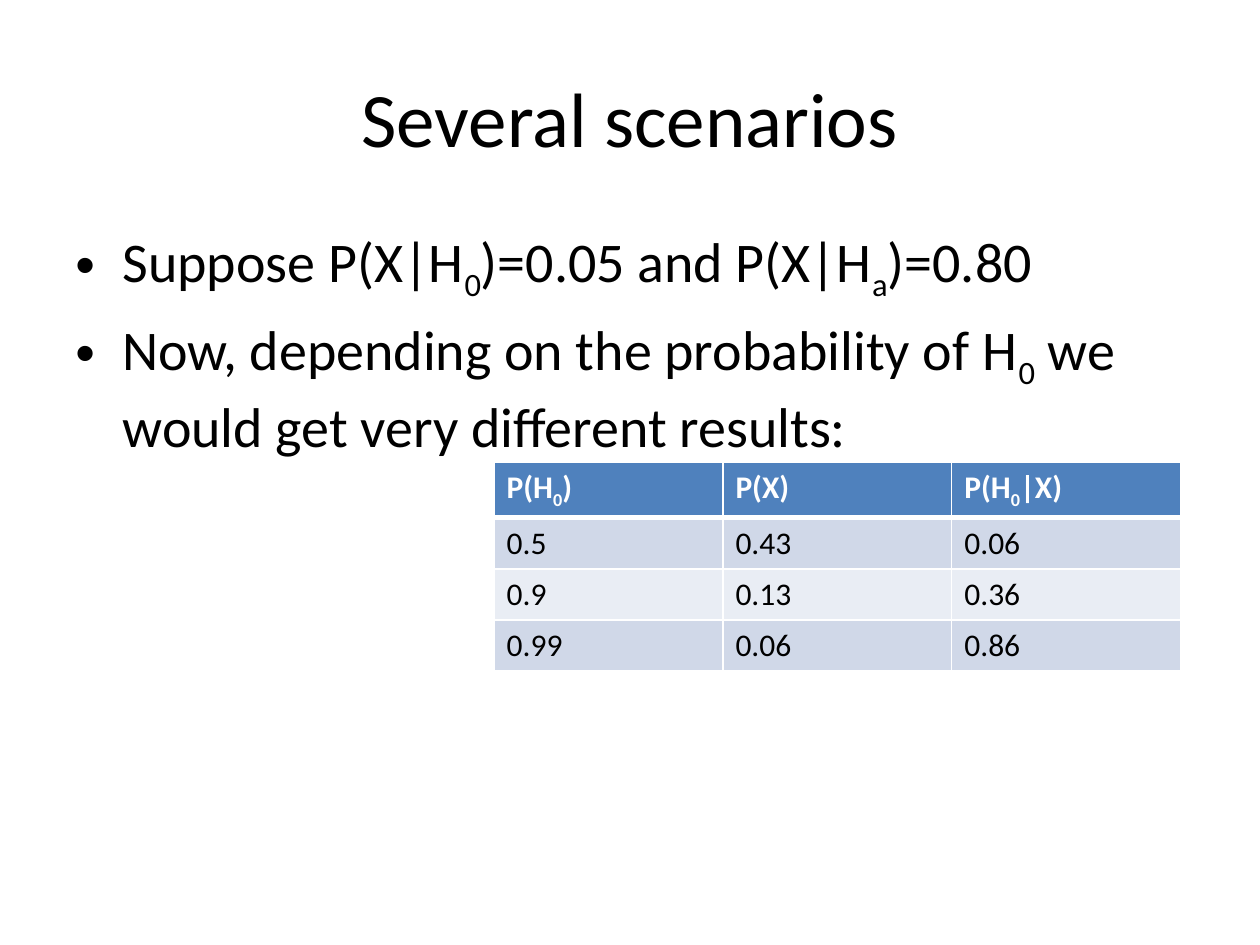
from dataclasses import dataclass

import pptx
import pptx.dml.color
import pptx.enum.text
import pptx.oxml
import pptx.oxml.ns
import pptx.util

Cm, Pt = pptx.util.Cm, pptx.util.Pt


@dataclass(frozen=True)
class Theme:
    font: str = "Calibri"
    text: str = "000000"
    white: str = "FFFFFF"
    header: str = "4F81BD"
    bands: tuple = ("D0D8E8", "E9EDF4")
    title_size: float = 44
    body_size: float = 32
    table_size: float = 18


THEME = Theme()
TITLE = "Several scenarios"
# Text between underscores is set as a subscript.
BULLETS = [
    "Suppose P(X|H_0_)=0.05 and P(X|H_a_)=0.80",
    "Now, depending on the probability of H_0_ we would get very different results:",
]
SCENARIOS = [
    ("P(H_0_)", "P(X)", "P(H_0_|X)"),
    ("0.5", "0.43", "0.06"),
    ("0.9", "0.13", "0.36"),
    ("0.99", "0.06", "0.86"),
]


def rgb(value):
    return pptx.dml.color.RGBColor.from_string(value)


def add_runs(p, text, size, color, bold=False):
    """Add text run by run, with each _part_ as a subscript."""
    for i, part in enumerate(text.split("_")):
        if not part:
            continue
        r = p.add_run()
        r.text = part
        r.font.name = THEME.font
        r.font.size = Pt(size)
        r.font.bold = bold
        r.font.color.rgb = rgb(color)
        if i % 2:
            r.font._element.set("baseline", "-25000")


def add_bullet(p, indent):
    pPr = p._p.get_or_add_pPr()
    pPr.set("marL", str(indent))
    pPr.set("indent", str(-indent))
    ns = pptx.oxml.ns.nsdecls("a")
    pPr.append(pptx.oxml.parse_xml(f'<a:buFont {ns} typeface="Arial"/>'))
    pPr.append(pptx.oxml.parse_xml(f'<a:buChar {ns} char="•"/>'))


def set_borders(cell, color, bottom):
    ns = pptx.oxml.ns.nsdecls("a")
    tcPr = cell._tc.get_or_add_tcPr()
    widths = {"L": 1, "R": 1, "T": 1, "B": bottom}
    for i, (side, width) in enumerate(widths.items()):
        tcPr.insert(i, pptx.oxml.parse_xml(
            f'<a:ln{side} {ns} w="{Pt(width)}"><a:solidFill>'
            f'<a:srgbClr val="{color}"/></a:solidFill></a:ln{side}>'))


def fill_title(slide, left, top, width, height):
    sp = slide.shapes.title
    sp.left, sp.top, sp.width, sp.height = left, top, width, height
    tf = sp.text_frame
    tf.vertical_anchor = pptx.enum.text.MSO_ANCHOR.MIDDLE
    p = tf.paragraphs[0]
    p.alignment = pptx.enum.text.PP_ALIGN.CENTER
    add_runs(p, TITLE, THEME.title_size, THEME.text)


def add_body(slide, left, top, width, height):
    tf = slide.shapes.add_textbox(left, top, width, height).text_frame
    tf.word_wrap = True
    for i, text in enumerate(BULLETS):
        p = tf.add_paragraph() if i else tf.paragraphs[0]
        p.space_before = Pt(0.2 * THEME.body_size)
        add_bullet(p, Cm(0.95))
        add_runs(p, text, THEME.body_size, THEME.text)


def add_scenarios(slide, left, top, width, row_height):
    rows, cols = len(SCENARIOS), len(SCENARIOS[0])
    table = slide.shapes.add_table(
        rows, cols, left, top, width, row_height * rows).table
    for i, values in enumerate(SCENARIOS):
        header = i == 0
        fill = THEME.header if header else THEME.bands[(i - 1) % 2]
        color = THEME.white if header else THEME.text
        for j, value in enumerate(values):
            cell = table.cell(i, j)
            cell.fill.solid()
            cell.fill.fore_color.rgb = rgb(fill)
            set_borders(cell, THEME.white, 3 if header else 1)
            add_runs(cell.text_frame.paragraphs[0], value,
                     THEME.table_size, color, header)


def main():
    prs = pptx.Presentation()
    prs.slide_width, prs.slide_height = Cm(25.4), Cm(19.05)
    slide = prs.slides.add_slide(prs.slide_layouts.get_by_name("Title Only"))
    margin = Cm(1.27)
    width = prs.slide_width - 2 * margin
    fill_title(slide, margin, Cm(0.76), width, Cm(3.18))
    add_scenarios(slide, Cm(9.96), Cm(9.32), Cm(13.84), Cm(1.03))
    add_body(slide, margin, Cm(4.45), width, Cm(12.57))
    prs.save("out.pptx")


if __name__ == "__main__":
    main()
